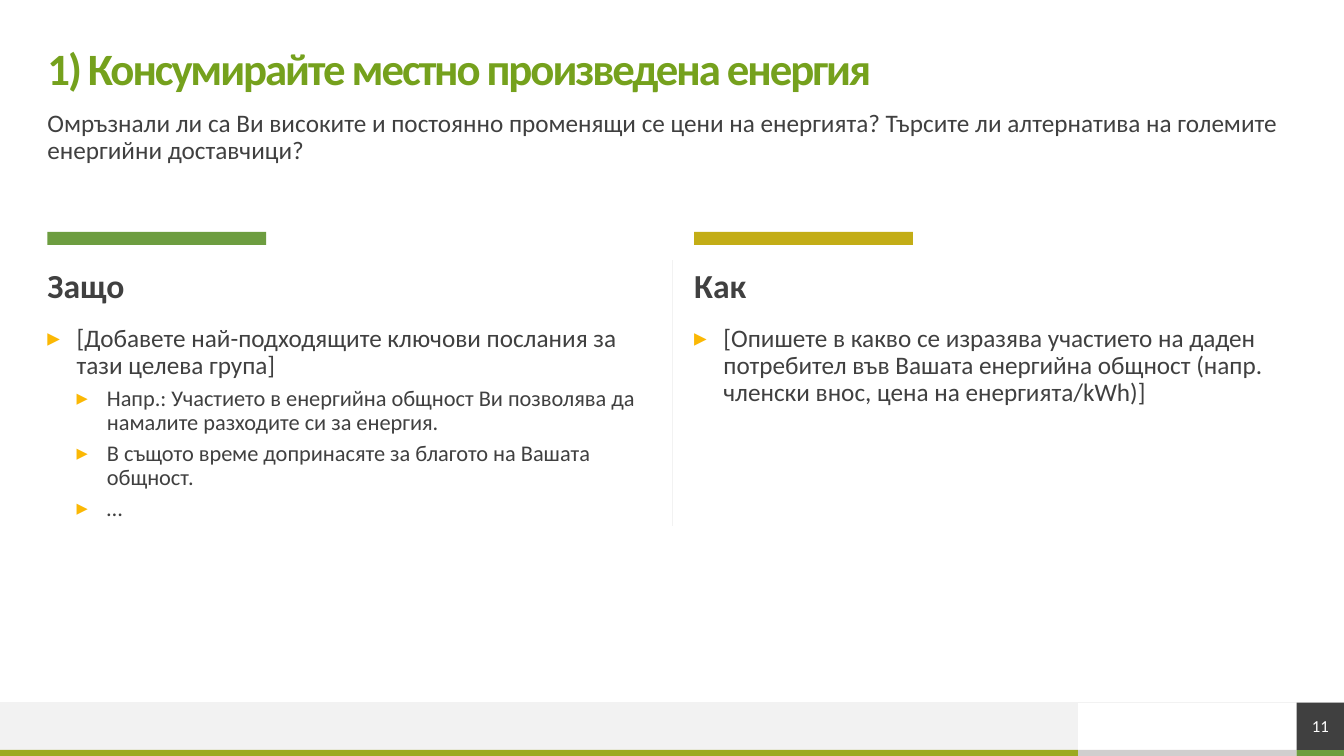
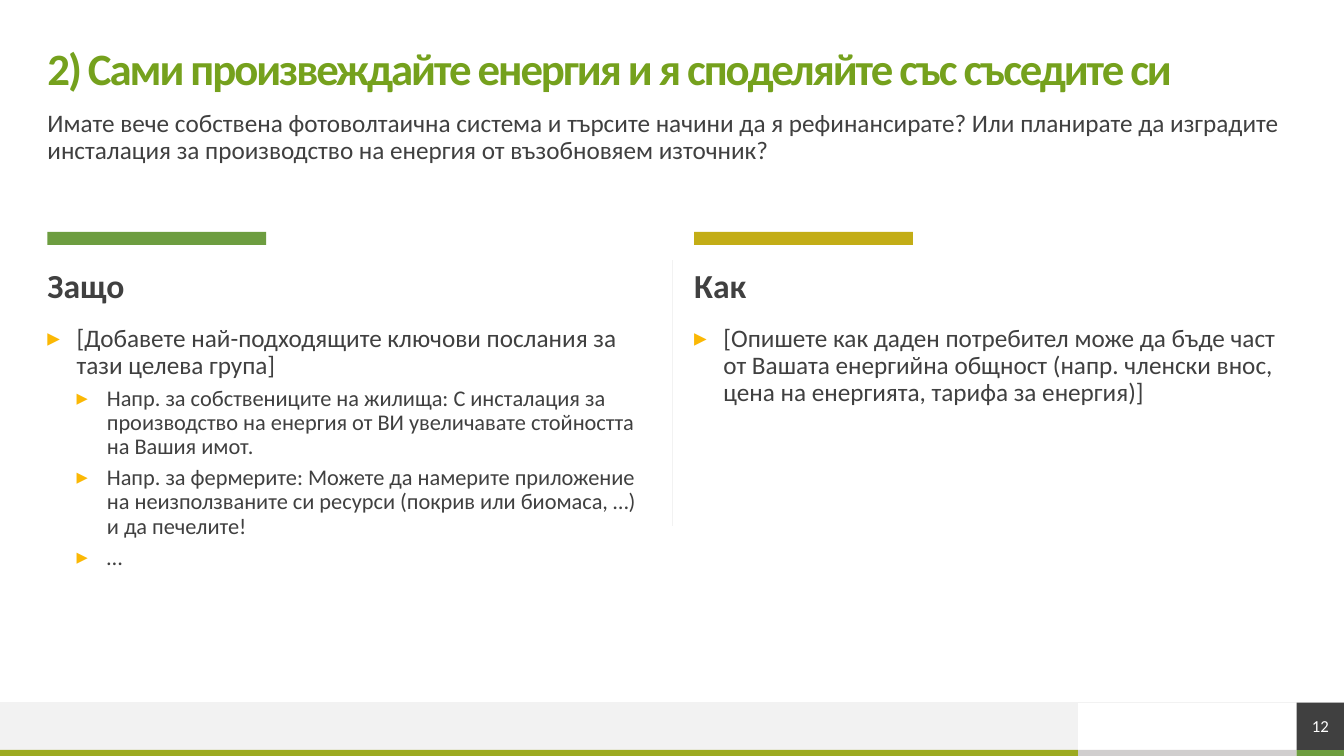
from lxml import etree
from pptx import Presentation
from pptx.dml.color import RGBColor
from pptx.enum.shapes import MSO_CONNECTOR, MSO_SHAPE
from pptx.enum.text import MSO_ANCHOR, PP_ALIGN
from pptx.oxml.ns import qn
from pptx.util import Inches, Pt

RECTANGLE = MSO_SHAPE.RECTANGLE
STRAIGHT = MSO_CONNECTOR.STRAIGHT
TOP, MIDDLE = MSO_ANCHOR.TOP, MSO_ANCHOR.MIDDLE
LEFT, CENTER = PP_ALIGN.LEFT, PP_ALIGN.CENTER

# Shared look
FONT = "Calibri"
TITLE_GREEN, LEAF, OLIVE, GOLD = "75A11D", "6D9D40", "9CAA20", "C3AD16"
DARK, PALE, GREY, WHITE, AMBER = "404040", "F2F2F2", "D0CECE", "FFFFFF", "FBB804"

# Grid: two columns between equal margins
WIDTH, HEIGHT = 13.33, 7.5
MARGIN, GAP = 0.47, 0.44
CONTENT = WIDTH - 2 * MARGIN
COLUMN = (CONTENT - GAP) / 2
ACCENT_WIDTH, ACCENT_HEIGHT = 2.17, 0.13
STRIP = 0.06
FOOTER_TOP = HEIGHT - STRIP - MARGIN

# Bullet levels: left indent, hanging indent, text size, space before
LEVELS = [(0.29, 0.29, 18, 10), (0.59, 0.3, 16, 5)]

WHY_PROMPT = "[Добавете най-подходящите ключови послания за тази целева група]"
SLIDES = [
    {
        "number": 11,
        "title": "1) Консумирайте местно произведена енергия",
        "intro": "Омръзнали ли са Ви високите и постоянно променящи се цени на "
                 "енергията? Търсите ли алтернатива на големите енергийни доставчици?",
        "why": [
            (0, WHY_PROMPT),
            (1, "Напр.: Участието в енергийна общност Ви позволява да намалите "
                "разходите си за енергия."),
            (1, "В същото време допринасяте за благото на Вашата общност."),
            (1, "…"),
        ],
        "how": [
            (0, "[Опишете в какво се изразява участието на даден потребител във "
                "Вашата енергийна общност (напр. членски внос, цена на енергията/kWh)]"),
        ],
    },
    {
        "number": 12,
        "title": "2) Сами произвеждайте енергия и я споделяйте със съседите си",
        "intro": "Имате вече собствена фотоволтаична система и търсите начини да я "
                 "рефинансирате? Или планирате да изградите инсталация за "
                 "производство на енергия от възобновяем източник?",
        "why": [
            (0, WHY_PROMPT),
            (1, "Напр. за собствениците на жилища: С инсталация за производство на "
                "енергия от ВИ увеличавате стойността на Вашия имот."),
            (1, "Напр. за фермерите: Можете да намерите приложение на неизползваните "
                "си ресурси (покрив или биомаса, …) и да печелите!"),
            (1, "…"),
        ],
        "how": [
            (0, "[Опишете как даден потребител може да бъде част от Вашата енергийна "
                "общност (напр. членски внос, цена на енергията, тарифа за енергия)]"),
        ],
    },
]


def color(value):
    return RGBColor.from_string(value)


def add_bar(page, left, top, width, height, fill):
    bar = page.shapes.add_shape(
        RECTANGLE, Inches(left), Inches(top), Inches(width), Inches(height))
    bar.shadow.inherit = False
    bar.fill.solid()
    bar.fill.fore_color.rgb = color(fill)
    bar.line.fill.background()
    return bar


def add_rule(page, x1, y1, x2, y2):
    rule = page.shapes.add_connector(
        STRAIGHT, Inches(x1), Inches(y1), Inches(x2), Inches(y2))
    rule.line.color.rgb = color(PALE)
    rule.line.width = Pt(0.5)
    etree.SubElement(rule._element.spPr, qn("a:effectLst"))


def add_box(page, left, top, width, height):
    return page.shapes.add_textbox(
        Inches(left), Inches(top), Inches(width), Inches(height))


def add_bullet(para, indent, hanging):
    properties = para._p.get_or_add_pPr()
    properties.set("marL", str(Inches(indent)))
    properties.set("indent", str(-Inches(hanging)))
    bullet_color = etree.SubElement(properties, qn("a:buClr"))
    etree.SubElement(bullet_color, qn("a:srgbClr"), val=AMBER)
    etree.SubElement(properties, qn("a:buFont"), typeface=FONT)
    etree.SubElement(properties, qn("a:buChar"), char="▸")


def write(para, text, size=18, ink=DARK, bold=False, align=LEFT, spacing=0.9, tracking=0):
    para.alignment = align
    para.line_spacing = spacing
    span = para.add_run()
    span.text = text
    span.font.name = FONT
    span.font.size = Pt(size)
    span.font.bold = bold
    span.font.color.rgb = color(ink)
    if tracking:
        span._r.get_or_add_rPr().set("spc", str(round(tracking * 100)))


def prepare_frame(box, anchor=TOP):
    frame = box.text_frame
    frame.word_wrap = True
    frame.vertical_anchor = anchor
    frame.margin_left = frame.margin_right = 0
    frame.margin_top = frame.margin_bottom = 0
    return frame


def add_text(box, text, anchor=TOP, **style):
    write(prepare_frame(box, anchor).paragraphs[0], text, **style)


def add_list(box, items):
    frame = prepare_frame(box)
    for index, (level, text) in enumerate(items):
        indent, hanging, size, before = LEVELS[level]
        para = frame.add_paragraph() if index else frame.paragraphs[0]
        para.level = level
        if index:
            para.space_before = Pt(before)
        add_bullet(para, indent, hanging)
        write(para, text, size=size)


def add_footer(page, number):
    right = WIDTH - MARGIN
    band = right - ACCENT_WIDTH
    strip_top = HEIGHT - STRIP
    add_bar(page, band, strip_top, ACCENT_WIDTH, STRIP, GREY)
    add_bar(page, 0, FOOTER_TOP, band, MARGIN, PALE)
    add_bar(page, 0, strip_top, band, STRIP, OLIVE)
    add_bar(page, right, strip_top, MARGIN, STRIP, LEAF)
    add_rule(page, WIDTH, FOOTER_TOP, 0, FOOTER_TOP)
    number_box = add_bar(page, right, FOOTER_TOP, MARGIN, MARGIN, DARK)
    add_text(number_box, str(number), anchor=MIDDLE, size=12, ink=WHITE,
             align=CENTER, spacing=1.0)


def add_column(page, index, heading, accent, items):
    left = MARGIN + index * (COLUMN + GAP)
    add_bar(page, left, 2.3, ACCENT_WIDTH, ACCENT_HEIGHT, accent)
    add_text(add_box(page, left, 2.67, COLUMN, 0.39), heading, size=24, bold=True)
    add_list(add_box(page, left, 3.23, COLUMN, 2.4), items)


def add_page(deck, content):
    page = deck.slides.add_slide(deck.slide_layouts[6])
    add_footer(page, content["number"])
    # Title and introduction
    add_text(add_box(page, MARGIN, MARGIN, CONTENT, 0.47), content["title"],
             anchor=MIDDLE, size=32, ink=TITLE_GREEN, bold=True, tracking=-1.5)
    add_text(add_box(page, MARGIN, 1.1, CONTENT, 0.64), content["intro"])
    # Two columns and the rule between them
    add_column(page, 0, "Защо", LEAF, content["why"])
    add_rule(page, WIDTH / 2, 2.58, WIDTH / 2, 5.22)
    add_column(page, 1, "Как", GOLD, content["how"])


def main():
    deck = Presentation()
    deck.slide_width = Inches(WIDTH)
    deck.slide_height = Inches(HEIGHT)
    for content in SLIDES:
        add_page(deck, content)
    deck.save("out.pptx")


if __name__ == "__main__":
    main()
